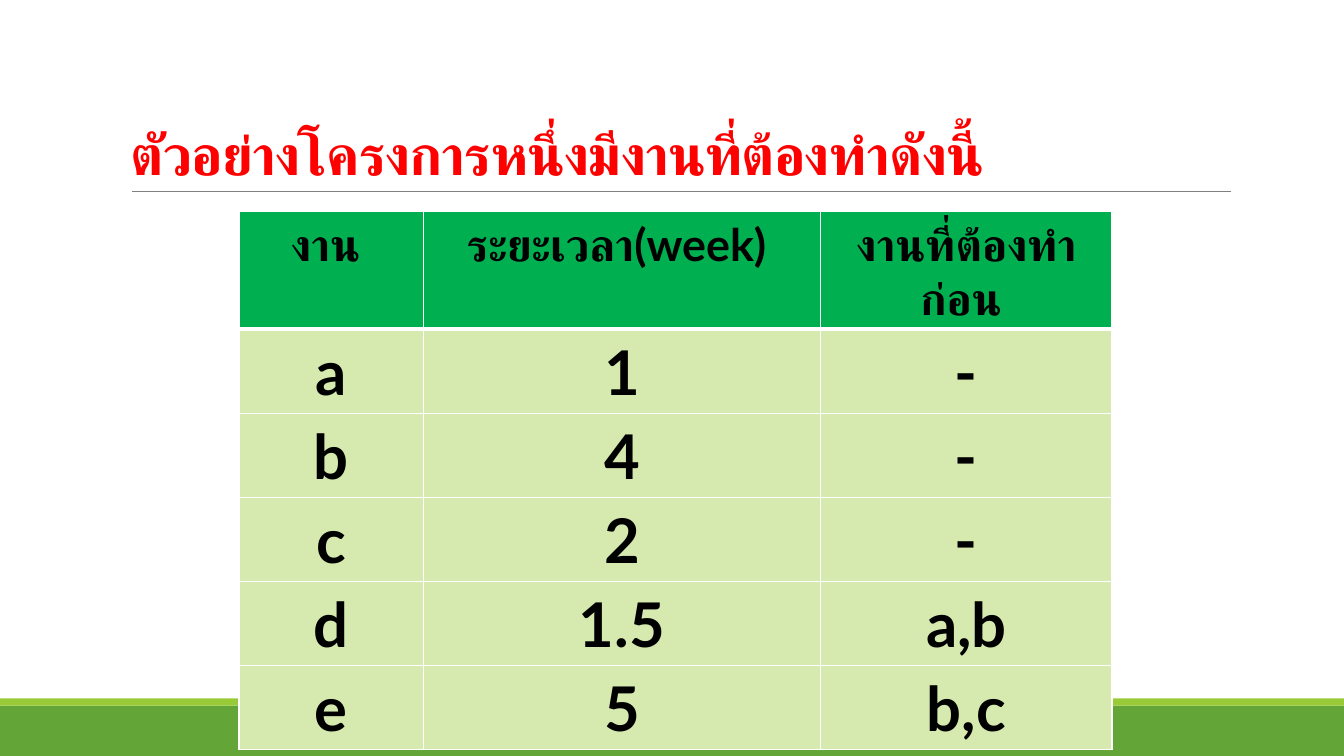
from lxml.etree import SubElement
from pptx import Presentation
from pptx.dml.color import RGBColor
from pptx.enum.shapes import MSO_CONNECTOR, MSO_SHAPE
from pptx.enum.text import MSO_ANCHOR, PP_ALIGN
from pptx.oxml.ns import qn
from pptx.util import Inches, Pt

WHITE = RGBColor(0xFF, 0xFF, 0xFF)
BLACK = RGBColor(0, 0, 0)
RED = RGBColor(0xFF, 0, 0)
GRAY = RGBColor(0x80, 0x80, 0x80)
DARK_GREEN = RGBColor(0x63, 0xA5, 0x37)
LIME = RGBColor(0x99, 0xCB, 0x38)
HEADER_GREEN = RGBColor(0, 0xB0, 0x50)
PALE_GREEN = RGBColor(0xD6, 0xEA, 0xAF)

TASKS = [
    ("งาน ", "ระยะเวลา(week) ", "งานที่ต้องทำก่อน "),
    ("a", "1", "-"),
    ("b", "4", "-"),
    ("c", "2", "-"),
    ("d", "1.5", "a,b"),
    ("e", "5", "b,c"),
]


class SlideBuilder:
    font = "Lato"

    def __init__(self, slide):
        self.s = slide

    def band(self, top, height, color):
        sp = self.s.shapes.add_shape(MSO_SHAPE.RECTANGLE, 0, Inches(top),
                                     Inches(13.33), Inches(height))
        sp.shadow.inherit = False
        sp.fill.solid()
        sp.fill.fore_color.rgb = color
        sp.line.fill.background()

    def rule(self, left, right, y):
        line = self.s.shapes.add_connector(MSO_CONNECTOR.STRAIGHT, Inches(left),
                                           Inches(y), Inches(right), Inches(y))
        line.line.color.rgb = GRAY
        line.line.width = Pt(0.5)
        SubElement(line._element.spPr, qn("a:effectLst"))

    def run(self, p, text, size, color):
        r = p.add_run()
        r.text = text
        r.font.name = self.font
        r.font.size = Pt(size)
        r.font.bold = True
        r.font.color.rgb = color
        # Thai text takes the complex-script font
        SubElement(r.font._element, qn("a:cs"), typeface=self.font)
        return r

    def title(self, text, left, top, width, height):
        tf = self.s.shapes.add_textbox(Inches(left), Inches(top), Inches(width),
                                       Inches(height)).text_frame
        tf.word_wrap = True
        tf.vertical_anchor = MSO_ANCHOR.BOTTOM
        p = tf.paragraphs[0]
        p.line_spacing = 0.85
        r = self.run(p, text, 40, RED)
        r.font._element.set("spc", "-50")

    def borders(self, cell, bottom):
        tcPr = cell._tc.get_or_add_tcPr()
        for i, (side, width) in enumerate(
                [("lnL", 1), ("lnR", 1), ("lnT", 1), ("lnB", bottom)]):
            ln = tcPr.makeelement(qn(f"a:{side}"), {"w": str(Pt(width))})
            fill = SubElement(ln, qn("a:solidFill"))
            SubElement(fill, qn("a:srgbClr"), val=str(WHITE))
            tcPr.insert(i, ln)

    def table(self, rows, left, top, widths, heights):
        table = self.s.shapes.add_table(
            len(rows), len(widths), Inches(left), Inches(top),
            Inches(sum(widths)), Inches(sum(heights))).table
        for column, width in zip(table.columns, widths):
            column.width = Inches(width)
        for i, (values, height) in enumerate(zip(rows, heights)):
            table.rows[i].height = Inches(height)
            header = i == 0
            for j, value in enumerate(values):
                cell = table.cell(i, j)
                cell.fill.solid()
                cell.fill.fore_color.rgb = HEADER_GREEN if header else PALE_GREEN
                self.borders(cell, 3 if header else 1)
                p = cell.text_frame.paragraphs[0]
                p.alignment = PP_ALIGN.CENTER
                self.run(p, value, 32 if header else 44, BLACK)


def main():
    prs = Presentation()
    prs.slide_width, prs.slide_height = Inches(13.33), Inches(7.5)
    slide = SlideBuilder(prs.slides.add_slide(prs.slide_layouts[6]))

    # Footer bands and title rule
    slide.band(7, 0.5, DARK_GREEN)
    slide.band(6.93, 0.07, LIME)
    slide.rule(1.31, 12.21, 1.9)

    # Title and task table
    slide.title("ตัวอย่างโครงการหนึ่งมีงานที่ต้องทำดังนี้", 1.2, 0.31, 11, 1.59)
    slide.table(TASKS, 2.37, 2.1, [1.83, 3.94, 2.89], [0.53] + [0.7] * 5)

    prs.save("out.pptx")


if __name__ == "__main__":
    main()
